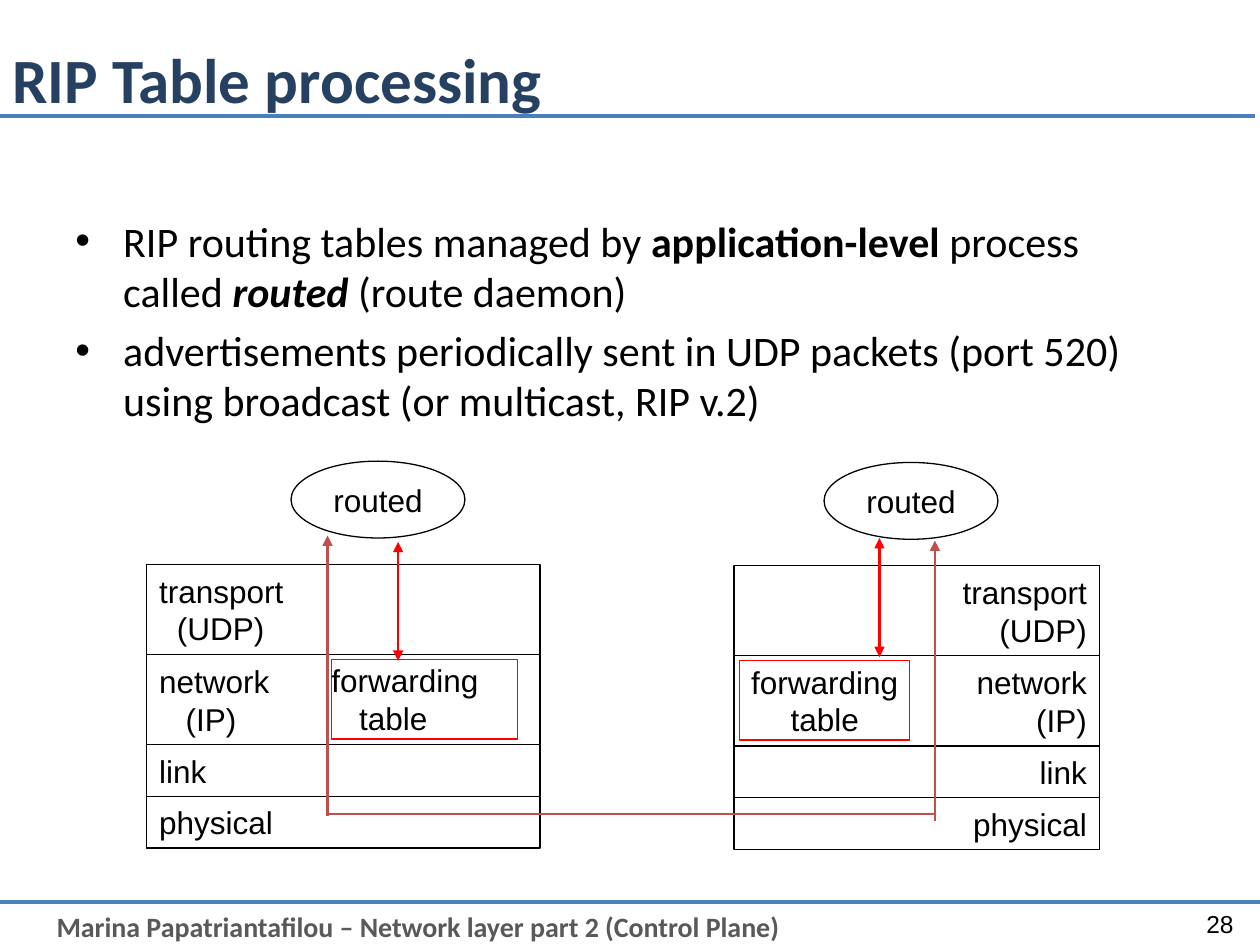
import pptx
import pptx.dml.color
import pptx.enum.shapes
import pptx.enum.text
import pptx.oxml
import pptx.oxml.ns
import pptx.util

RGBColor = pptx.dml.color.RGBColor
BLACK = RGBColor(0x00, 0x00, 0x00)
RED = RGBColor(0xFF, 0x00, 0x00)
BRICK = RGBColor(0xC0, 0x50, 0x4D)
RULE_BLUE = RGBColor(0x4B, 0x7E, 0xBC)
TITLE_BLUE = RGBColor(0x25, 0x40, 0x61)
FOOTER_GRAY = RGBColor(0x59, 0x59, 0x59)

SHAPES = pptx.enum.shapes.MSO_SHAPE
ALIGN = pptx.enum.text.PP_ALIGN
ANCHOR = pptx.enum.text.MSO_ANCHOR
Pt = pptx.util.Pt

presentation = pptx.Presentation()
presentation.slide_width = pptx.util.Inches(10)
presentation.slide_height = pptx.util.Inches(7.5)
slide = presentation.slides.add_slide(presentation.slide_layouts[6])

# Grid of 100 columns by 75 rows
COLUMN = presentation.slide_width / 100
ROW = presentation.slide_height / 75

LABEL = {"name": "Arial", "size": Pt(18)}
TITLE = {"name": "Calibri", "size": Pt(36), "bold": True}
FOOTER = {"name": "Calibri", "size": Pt(16), "bold": True}
BODY = {"name": "Calibri", "size": Pt(24)}
NUMBER = {"name": "Arial", "size": Pt(14)}


def add_block(box, lines, font=LABEL, color=BLACK, align=ALIGN.LEFT,
              outline=None, kind=SHAPES.RECTANGLE, **frame):
    """Add a shape; each line is a list of (text, extra font values)."""
    left, top, width, height = box
    shape = slide.shapes.add_shape(kind, int(left * COLUMN), int(top * ROW),
                                   int(width * COLUMN), int(height * ROW))
    shape.shadow.inherit = False
    shape.fill.background()
    if outline is None:
        shape.line.fill.background()
    else:
        shape.line.color.rgb = outline
        shape.line.width = Pt(0.75)
    frame_values = {"word_wrap": True, "vertical_anchor": ANCHOR.MIDDLE} | frame
    for name, value in frame_values.items():
        setattr(shape.text_frame, name, value)
    for index, line in enumerate(lines):
        if index:
            paragraph = shape.text_frame.add_paragraph()
        else:
            paragraph = shape.text_frame.paragraphs[0]
        paragraph.alignment = align
        for text, extra in line:
            run = paragraph.add_run()
            run.text = text
            run.font.color.rgb = color
            for name, value in (font | extra).items():
                setattr(run.font, name, value)
    return shape


def add_line(start, end, color, width, arrows=()):
    """Add a straight line; arrows names the ends that carry a triangle."""
    line = slide.shapes.add_connector(
        pptx.enum.shapes.MSO_CONNECTOR.STRAIGHT,
        int(start[0] * COLUMN), int(start[1] * ROW),
        int(end[0] * COLUMN), int(end[1] * ROW))
    line.line.color.rgb = color
    line.line.width = Pt(width)
    outline = line.line._get_or_add_ln()
    for arrow in arrows:
        outline.append(pptx.oxml.parse_xml(
            f'<a:{arrow} {pptx.oxml.ns.nsdecls("a")} type="triangle"/>'))
    line._element.spPr.append(pptx.oxml.parse_xml(
        f'<a:effectLst {pptx.oxml.ns.nsdecls("a")}/>'))


# Footer, title and their rules
add_line((0, 71.6), (100, 71.6), RULE_BLUE, 2.25)
add_block((3.5, 71.7, 92.5, 3.7),
          [[("Marina Papatriantafilou – Network layer part 2 (Control Plane)", {})]],
          FOOTER, FOOTER_GRAY, vertical_anchor=ANCHOR.TOP)
add_line((-0.4, 9.2), (99.6, 9.2), RULE_BLUE, 2.25)
add_block((90.9, 71.3, 8, 4), [[("28", {})]], NUMBER, align=ALIGN.RIGHT)
add_block((0, 0, 85, 12.5), [[("RIP Table processing", {})]], TITLE, TITLE_BLUE)

# Bulleted text
body = add_block(
    (5, 16.6, 90, 18.3),
    [[("RIP routing tables managed by ", {}),
      ("application-level", {"bold": True}),
      (" process called ", {}),
      ("routed", {"bold": True, "italic": True}),
      (" (route daemon)", {})],
     [("advertisements periodically sent in UDP packets (port 520) "
       "using broadcast (or multicast, RIP v.2)", {})]],
    BODY, vertical_anchor=ANCHOR.TOP)
for paragraph in body.text_frame.paragraphs:
    paragraph.space_before = Pt(4.8)
    properties = paragraph._p.get_or_add_pPr()
    properties.set("marL", str(int(3.8 * COLUMN)))
    properties.set("indent", str(int(-3.8 * COLUMN)))
    properties.append(pptx.oxml.parse_xml(
        f'<a:buFont {pptx.oxml.ns.nsdecls("a")} typeface="Arial"/>'))
    properties.append(pptx.oxml.parse_xml(
        f'<a:buChar {pptx.oxml.ns.nsdecls("a")} char="•"/>'))

# Two protocol stacks: layer lines, height in rows, indent of the second line
LAYERS = [(["transport", "(UDP)"], 7.15, 1.4), (["network", "(IP)"], 7.15, 2.1),
          (["link"], 4.1, 0), (["physical"], 4.1, 0)]
HOSTS = [
    {"left": 11.65, "top": 44.8, "width": 31.2, "align": ALIGN.LEFT,
     "oval": 23.1, "table": (26.3, 14.8), "update": 31.6, "path_x": 26},
    {"left": 58.25, "top": 44.9, "width": 29, "align": ALIGN.RIGHT,
     "oval": 65.4, "table": (58.7, 13.5), "update": 69.8, "path_x": 74.2},
]
for host in HOSTS:
    is_left = host["align"] == ALIGN.LEFT
    top = host["top"]
    for lines, height, indent in LAYERS:
        layer = add_block((host["left"], top, host["width"], height),
                          [[(line, {})] for line in lines],
                          align=host["align"], outline=BLACK)
        if is_left and indent:
            layer.text_frame.paragraphs[1]._p.get_or_add_pPr().set(
                "marL", str(int(indent * COLUMN)))
        top += height

    # Forwarding table inside the network layer
    table_left, table_width = host["table"]
    table = add_block((table_left, host["top"] + 7.55, table_width, 6.3),
                      [[("forwarding", {})], [("table", {})]],
                      align=ALIGN.LEFT if is_left else ALIGN.CENTER, outline=RED,
                      margin_left=0, margin_right=0)
    if is_left:
        table.text_frame.paragraphs[1]._p.get_or_add_pPr().set(
            "marL", str(int(2.2 * COLUMN)))

    # Routing process above the stack
    add_block((host["oval"], host["top"] - 8.2, 13.8, 6.1), [[("routed", {})]],
              align=ALIGN.CENTER, outline=BLACK, kind=SHAPES.OVAL, word_wrap=False)

# Advertisement route between the hosts, and table updates
for host, bottom, tip, update_top in zip(HOSTS, (64.8, 65.2), (42.5, 42.9), (43, 42.7)):
    add_line((host["path_x"], bottom), (host["path_x"], tip), BRICK, 1.5, ["tailEnd"])
    add_line((host["update"], update_top), (host["update"], update_top + 9.45),
             RED, 1.5, ["headEnd", "tailEnd"])
add_line((HOSTS[0]["path_x"], 64.6), (HOSTS[1]["path_x"], 64.6), BRICK, 1.5)

presentation.save("out.pptx")
